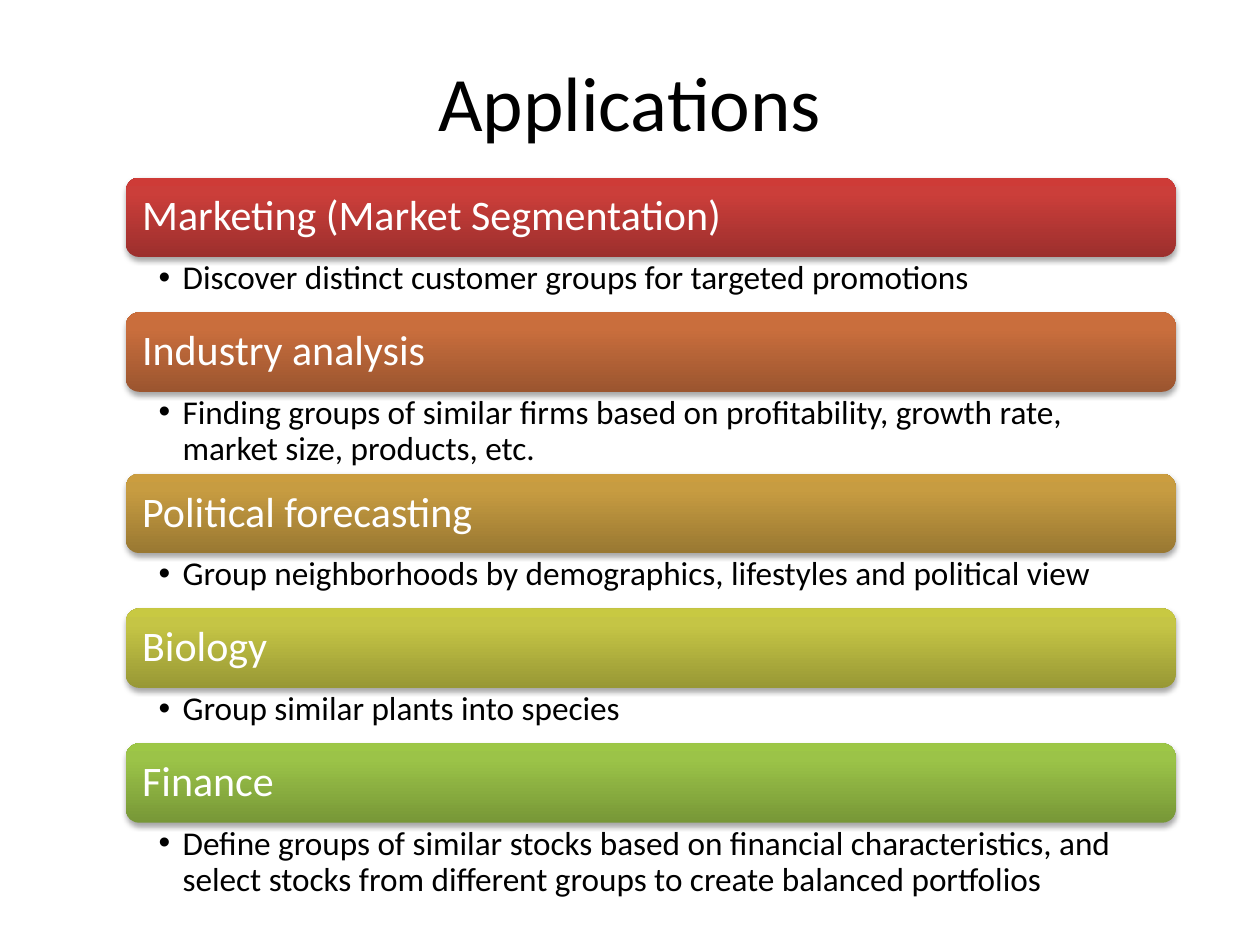
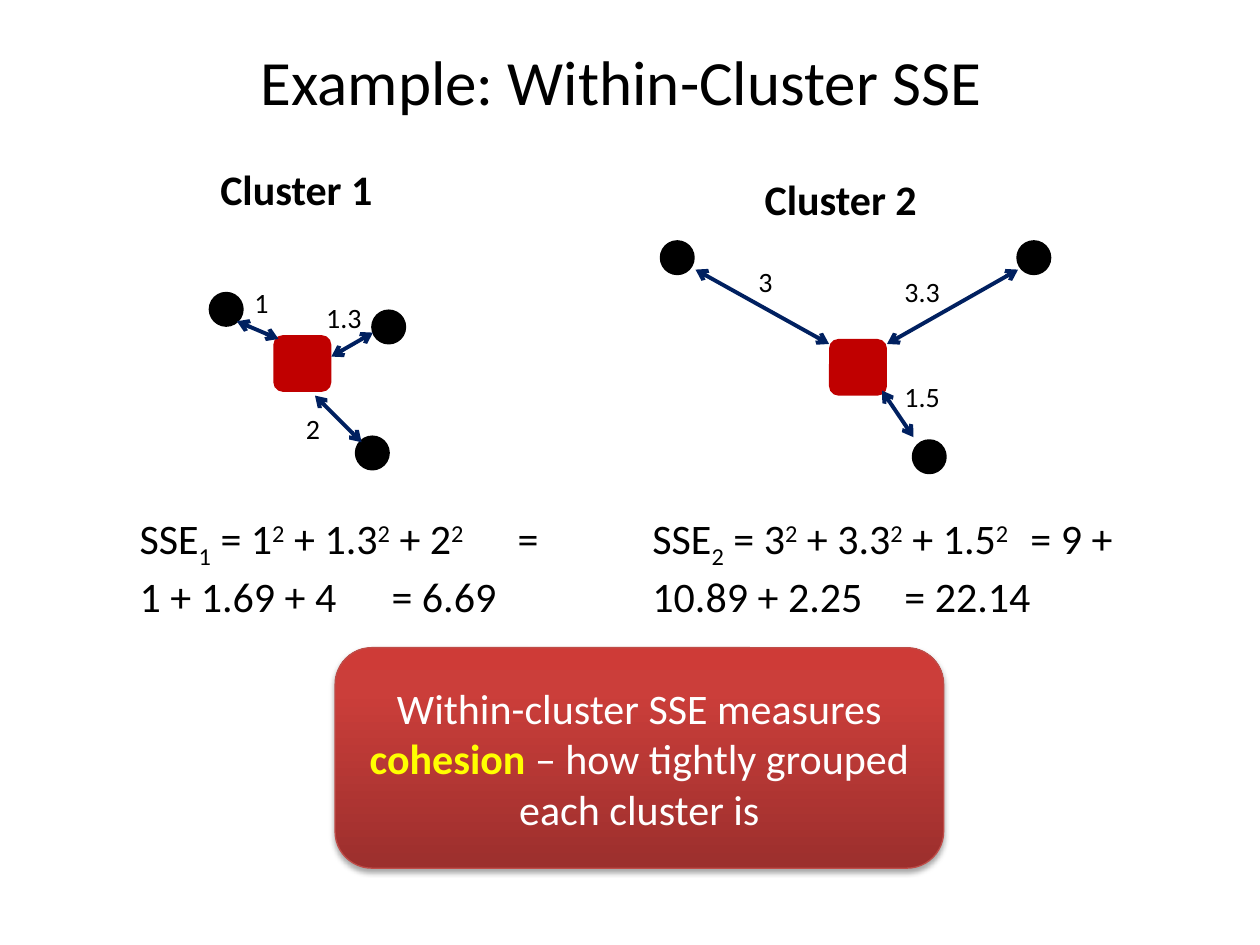
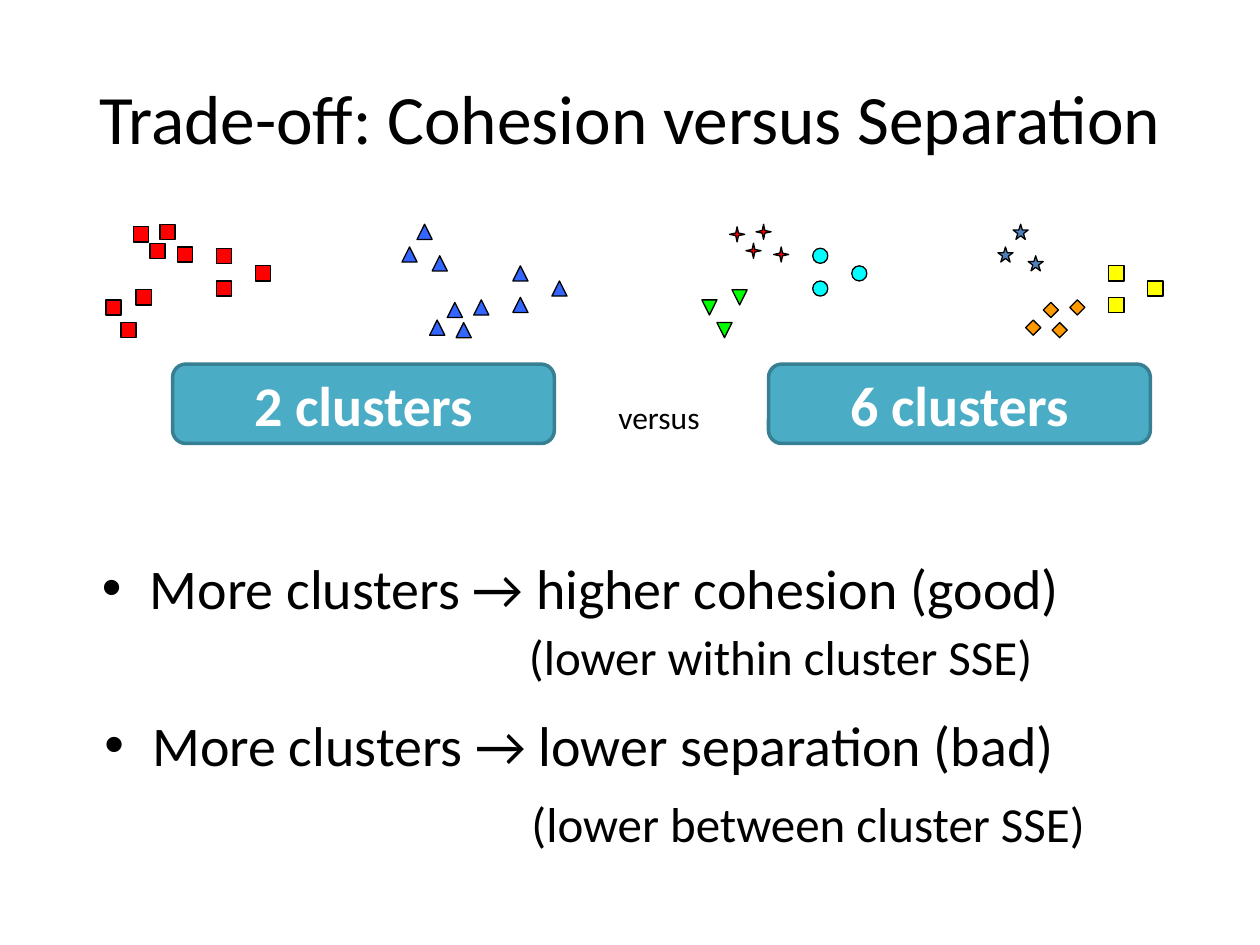
from lxml import etree
from pptx import Presentation
from pptx.dml.color import RGBColor
from pptx.enum.shapes import MSO_CONNECTOR, MSO_SHAPE
from pptx.enum.text import MSO_ANCHOR, PP_ALIGN
from pptx.oxml import parse_xml
from pptx.oxml.ns import nsdecls, qn
from pptx.util import Inches, Pt

FONT = "Calibri"
CENTER, MIDDLE, TOP = PP_ALIGN.CENTER, MSO_ANCHOR.MIDDLE, MSO_ANCHOR.TOP
ROUNDED, OVAL, SQUARE = MSO_SHAPE.ROUNDED_RECTANGLE, MSO_SHAPE.OVAL, MSO_SHAPE.RECTANGLE
TRIANGLE, DIAMOND = MSO_SHAPE.ISOSCELES_TRIANGLE, MSO_SHAPE.DIAMOND
STAR4, STAR5 = MSO_SHAPE.STAR_4_POINT, MSO_SHAPE.STAR_5_POINT
STRAIGHT = MSO_CONNECTOR.STRAIGHT

COLORS = {
    "black": "000000", "white": "FFFFFF", "centroid": "C00000", "arrow": "002060",
    "highlight": "FFFF00", "callout_line": "BF4C48",
    "badge": "4BACC6", "badge_line": "377F92",
    "red": "FF0000", "blue": "3366FF", "steel": "4F81BD", "orange": "FF9900",
    "yellow": "FFFF00", "green": "00FF00", "cyan": "00FFFF",
}
# Dark bottom, lighter body, bright top edge
GRADIENTS = {
    "red": ("9C2F2D", "CB3E3A", "CE3B37"),
    "rust": ("9B552F", "C96E3D", "CD6E3B"),
    "gold": ("997832", "C79C41", "CB9D3F"),
    "olive": ("989835", "C5C545", "C8C942"),
    "lime": ("779737", "9BC348", "9DC746"),
}
DEFAULT_INSETS = (0.1, 0.05, 0.1, 0.05)

APPLICATIONS = [
    ("Marketing (Market Segmentation)", "red", 0.44,
     "Discover distinct customer groups for targeted promotions"),
    ("Industry analysis", "rust", 0.65,
     "Finding groups of similar firms based on profitability, growth rate, "
     "market size, products, etc."),
    ("Political forecasting", "gold", 0.44,
     "Group neighborhoods by demographics, lifestyles and political view"),
    ("Biology", "olive", 0.44, "Group similar plants into species"),
    ("Finance", "lime", 0.65,
     "Define groups of similar stocks based on financial characteristics, and "
     "select stocks from different groups to create balanced portfolios"),
]

# Spokes: distance, label, dot, arrow start and arrow end, all from the centroid corner
CLUSTERS = [
    {"number": "1", "centroid": (2.17, 2.66), "heading": (-0.52, -1.41),
     "formula": (1.01, 4.02, 3.47, 1.31), "result": " \t= 1 + 1.69 + 4 \t= 6.69",
     "spokes": [
         ("1", (-0.25, -0.44), (-0.5, -0.33), (0.04, 0.03), (-0.29, -0.11)),
         ("1.3", (0.32, -0.32), (0.79, -0.19), (0.79, -0.02), (0.46, 0.17)),
         ("2", (0.16, 0.56), (0.66, 0.81), (0.7, 0.85), (0.33, 0.48))]},
    {"number": "2", "centroid": (6.58, 2.69), "heading": (-0.61, -1.36),
     "formula": (5.08, 4.02, 4, 1.31), "result": " \t= 9 + 10.89 + 2.25 \t= 22.14",
     "spokes": [
         ("3", (-0.66, -0.64), (-1.33, -0.77), (0, 0.04), (-1.06, -0.55)),
         ("3.3", (0.5, -0.56), (1.5, -0.77), (0.46, 0.04), (1.5, -0.55)),
         ("1.5", (0.5, 0.27), (0.67, 0.81), (0.42, 0.41), (0.67, 0.78))]},
]

# Six natural groups of points, from the corner of the scatter
POINT_GROUPS = {
    "upper left": [(0.57, 0.18), (0.22, 0.02), (0.43, 0), (0.35, 0.15)],
    "lower left": [(0.24, 0.52), (0, 0.6), (0.12, 0.78)],
    "middle": [(0.88, 0.19), (1.19, 0.33), (0.88, 0.45)],
    "upper right": [(2.59, 0.25), (2.35, 0.18), (2.47, 0)],
    "lower right": [(2.92, 0.6), (2.57, 0.76), (2.78, 0.78), (2.71, 0.62)],
    "far right": [(3.23, 0.58), (3.54, 0.45), (3.23, 0.33)],
}
# Marker of each group: preset, colour, rotation
LEFT_MARKER, RIGHT_MARKER = (SQUARE, "red", 0), (TRIANGLE, "blue", 0)
TWO_CLUSTERS = dict(zip(POINT_GROUPS, [LEFT_MARKER] * 3 + [RIGHT_MARKER] * 3))
SIX_CLUSTERS = {
    "upper left": (STAR4, "red", 0), "lower left": (TRIANGLE, "green", 180),
    "middle": (OVAL, "cyan", 0), "upper right": (STAR5, "steel", 0),
    "lower right": (DIAMOND, "orange", 0), "far right": (SQUARE, "yellow", 0),
}


def rgb(name):
    return RGBColor.from_string(COLORS[name])


def inches(values):
    return [Inches(value) for value in values]


def write(shape, runs, size, color="black", bold=False, align=None, anchor=TOP,
          insets=DEFAULT_INSETS, spacing=None, bullet=None):
    """Runs are (text, changes) pairs; bullet is the hanging indent in inches."""
    frame = shape.text_frame
    margins = dict(zip(("margin_left", "margin_top", "margin_right", "margin_bottom"),
                       inches(insets)))
    for name, value in {"word_wrap": True, "vertical_anchor": anchor, **margins}.items():
        setattr(frame, name, value)
    paragraph = frame.paragraphs[0]
    paragraph.alignment = align
    paragraph.line_spacing = spacing
    if bullet:
        props = paragraph._p.get_or_add_pPr()
        props.set("marL", str(Inches(bullet)))
        props.set("indent", str(-Inches(bullet)))
        etree.SubElement(props, qn("a:buFont")).set("typeface", "Arial")
        etree.SubElement(props, qn("a:buChar")).set("char", "•")
    for text, changes in [(runs, {})] if isinstance(runs, str) else runs:
        run = paragraph.add_run()
        run.text = text
        font = {"name": FONT, "size": Pt(size), "bold": changes.get("bold", bold)}
        for name, value in font.items():
            setattr(run.font, name, value)
        run.font.color.rgb = rgb(changes.get("color", color))
        if "baseline" in changes:
            run._r.get_or_add_rPr().set("baseline", str(changes["baseline"] * 1000))


def add_text(slide, box, runs, size, **format_values):
    write(slide.shapes.add_textbox(*inches(box)), runs, size, **format_values)


def add_title(slide, box, text, size):
    add_text(slide, box, text, size, align=CENTER, anchor=MIDDLE)


def add_block(slide, preset, box, fill=None, line=None, width=0.75):
    block = slide.shapes.add_shape(preset, *inches(box))
    block.shadow.inherit = False
    if fill:
        block.fill.solid()
        block.fill.fore_color.rgb = rgb(fill)
    if line:
        block.line.color.rgb = rgb(line)
        block.line.width = Pt(width)
    else:
        block.line.fill.background()
    return block


def add_glossy_block(slide, box, gradient, line=None):
    """Rounded block with an upward gradient and a soft shadow below."""
    block = add_block(slide, ROUNDED, box, line=line)
    stops = "".join(
        f'<a:gs pos="{position}000"><a:srgbClr val="{color}"/></a:gs>'
        for position, color in zip((0, 80, 100), GRADIENTS[gradient]))
    props = block._element.spPr
    props.find(qn("a:prstGeom")).addnext(parse_xml(
        f'<a:gradFill {nsdecls("a")} rotWithShape="1"><a:gsLst>{stops}</a:gsLst>'
        '<a:lin ang="16200000" scaled="0"/></a:gradFill>'))
    props.find(qn("a:effectLst")).append(parse_xml(
        f'<a:outerShdw {nsdecls("a")} blurRad="{Pt(3.1)}" dist="{Pt(1.8)}" dir="5400000" '
        'rotWithShape="0"><a:srgbClr val="000000"><a:alpha val="35000"/></a:srgbClr>'
        '</a:outerShdw>'))
    return block


def add_double_arrow(slide, start, end):
    arrow = slide.shapes.add_connector(STRAIGHT, *inches(start + end))
    arrow.line.color.rgb = rgb("arrow")
    arrow.line.width = Pt(2.25)
    line = arrow.line._get_or_add_ln()
    for end_name in ("a:headEnd", "a:tailEnd"):
        etree.SubElement(line, qn(end_name)).set("type", "arrow")
    etree.SubElement(arrow._element.spPr, qn("a:effectLst"))


# Slide 1: headed list
def add_application_list(slide, left, top, width):
    bar_height, pad = 0.63, 0.03
    for heading, gradient, detail_height, detail in APPLICATIONS:
        add_glossy_block(slide, (left, top, width, bar_height), gradient)
        add_text(slide, (left + pad, top + pad, width - 2 * pad, bar_height - 2 * pad),
                 heading, 24, color="white", anchor=MIDDLE, insets=(0.1,) * 4, spacing=0.9)
        top += bar_height
        add_text(slide, (left, top, width, detail_height), detail, 19,
                 insets=(0.26, 0.03, 0.19, 0.03), spacing=0.9, bullet=0.19)
        top += detail_height


def applications_slide(slide):
    add_title(slide, (0.5, 0.17, 9, 1.25), "Applications", 44)
    add_application_list(slide, 1, 1.41, 8.33)


# Slide 2: distances to the centroid
def add_cluster(slide, cluster):
    left, top = cluster["centroid"]

    def place(offset):
        return left + offset[0], top + offset[1]

    add_block(slide, ROUNDED, (left, top, 0.46, 0.45), "centroid")
    add_text(slide, (*place(cluster["heading"]), 1.7, 0.5),
             f"Cluster {cluster['number']}", 24, bold=True)
    for distance, label, dot, start, end in cluster["spokes"]:
        add_block(slide, OVAL, (*place(dot), 0.25, 0.25), "black", "black", 2)
        add_double_arrow(slide, place(start), place(end))
        label_width = 0.33 if len(distance) == 1 else 0.51
        add_text(slide, (*place(label), label_width, 0.37), distance, 16)


def add_sse_formula(slide, cluster):
    runs = [("SSE", {}), (cluster["number"], {"baseline": -25})]
    for index, spoke in enumerate(cluster["spokes"]):
        sign = " + " if index else " = "
        runs += [(sign + spoke[0], {}), ("2", {"baseline": 30})]
    runs.append((cluster["result"], {}))
    add_text(slide, cluster["formula"], runs, 24)


def within_cluster_slide(slide):
    add_title(slide, (0.43, 0.01, 9, 1.25), "Example: Within-Cluster SSE", 36)
    for cluster in CLUSTERS:
        add_cluster(slide, cluster)
        add_sse_formula(slide, cluster)
    cohesion_note = add_glossy_block(slide, (2.66, 5.14, 4.83, 1.75), "red", "callout_line")
    write(cohesion_note, [
        ("Within-cluster SSE measures ", {}),
        ("cohesion ", {"color": "highlight", "bold": True}),
        ("– how tightly grouped each cluster is", {}),
    ], 24, color="white", align=CENTER, anchor=MIDDLE)


# Slide 3: the same points in two or six clusters
def add_scatter(slide, left, top, markers, caption):
    for group, points in POINT_GROUPS.items():
        preset, color, rotation = markers[group]
        for x, y in points:
            marker = add_block(slide, preset, (left + x, top + y, 0.12, 0.12), color, "black")
            marker.rotation = rotation
    badge = add_block(slide, ROUNDED, (left + 0.53, top + 1.11, 3.03, 0.63),
                      "badge", "badge_line", 2)
    write(badge, caption, 32, color="white", bold=True, align=CENTER, anchor=MIDDLE)


def add_effect(slide, left, top, statement, note, note_offset):
    add_text(slide, (left, top, 9, 1.1), statement, 32, bullet=0.38)
    add_text(slide, (left + 3.39, top + note_offset, 5.2, 0.57), note, 28)


def trade_off_slide(slide):
    add_title(slide, (0.5, 0.3, 9, 1.25), "Trade-off: Cohesion versus Separation", 39.6)
    add_scatter(slide, 0.84, 1.78, TWO_CLUSTERS, "2 clusters")
    add_scatter(slide, 5.57, 1.78, SIX_CLUSTERS, "6 clusters")
    add_text(slide, (4.81, 3.11, 0.9, 0.4), "versus", 18)
    add_effect(slide, 0.71, 4.34, "More clusters → higher cohesion (good)",
               "(lower within cluster SSE)", 0.58)
    add_effect(slide, 0.73, 5.59, "More clusters → lower separation (bad)",
               "(lower between cluster SSE)", 0.66)


def main():
    deck = Presentation()
    deck.slide_width, deck.slide_height = Inches(10), Inches(7.5)
    blank = deck.slide_layouts[6]
    for build in (applications_slide, within_cluster_slide, trade_off_slide):
        build(deck.slides.add_slide(blank))
    deck.save("out.pptx")


if __name__ == "__main__":
    main()
